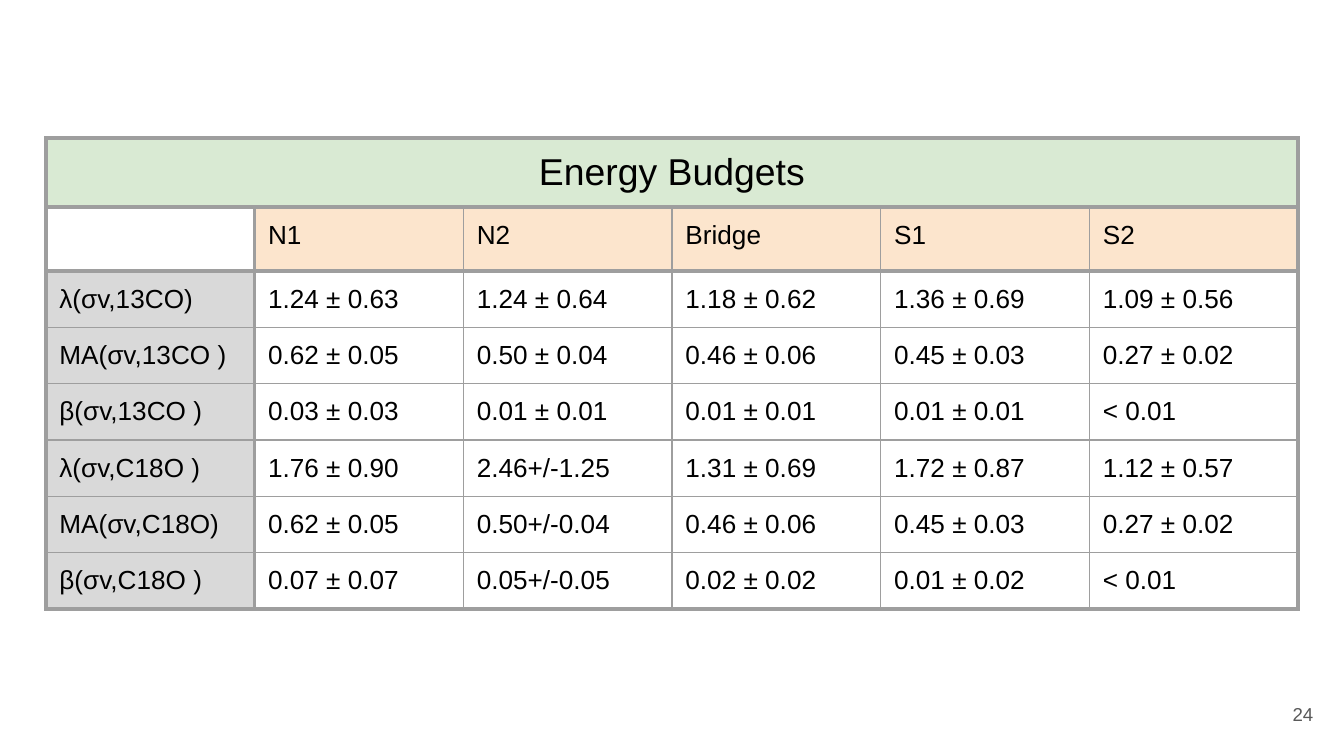
from lxml import etree
from pptx import Presentation
from pptx.dml.color import RGBColor
from pptx.enum import text
from pptx.oxml import ns
from pptx.util import Pt

BLACK = RGBColor(0x00, 0x00, 0x00)
GREY_TEXT = RGBColor(0x59, 0x59, 0x59)
GREY_LINE = RGBColor(0x9E, 0x9E, 0x9E)
GREY_FILL = RGBColor(0xD9, 0xD9, 0xD9)
GREEN = RGBColor(0xD9, 0xEA, 0xD3)
PEACH = RGBColor(0xFC, 0xE5, 0xCD)

THICK, THIN = Pt(2.25), Pt(0.75)
INSET = Pt(7.2)

TITLE = "Energy Budgets"
BUDGETS = [
    ["", "N1", "N2", "Bridge", "S1", "S2"],
    ["λ(σv,13CO)", "1.24 ± 0.63", "1.24 ± 0.64", "1.18 ± 0.62", "1.36 ± 0.69", "1.09 ± 0.56"],
    ["MA(σv,13CO )", "0.62 ± 0.05", "0.50 ± 0.04", "0.46 ± 0.06", "0.45 ± 0.03", "0.27 ± 0.02"],
    ["β(σv,13CO )", "0.03 ± 0.03", "0.01 ± 0.01", "0.01 ± 0.01", "0.01 ± 0.01", "< 0.01"],
    ["λ(σv,C18O )", "1.76 ± 0.90", "2.46+/-1.25", "1.31 ± 0.69", "1.72 ± 0.87", "1.12 ± 0.57"],
    ["MA(σv,C18O)", "0.62 ± 0.05", "0.50+/-0.04", "0.46 ± 0.06", "0.45 ± 0.03", "0.27 ± 0.02"],
    ["β(σv,C18O )", "0.07 ± 0.07", "0.05+/-0.05", "0.02 ± 0.02", "0.01 ± 0.02", "< 0.01"],
]


def set_all(target, values):
    for name, value in values.items():
        setattr(target, name, value)


def write(para, words, size, color=BLACK, align=text.PP_ALIGN.LEFT):
    para.alignment = align
    # The paragraph font also sizes a cell without words
    for font in (para.font, *([para.add_run().font] if words else [])):
        set_all(font, {"name": "Arial", "size": Pt(size)})
        font.color.rgb = color
    if words:
        para.runs[0].text = words


def draw_borders(cell, widths):
    properties = cell._tc.get_or_add_tcPr()
    for side, width in widths.items():
        line = etree.SubElement(properties, ns.qn(f"a:ln{side}"), w=str(width))
        fill = etree.SubElement(line, ns.qn("a:solidFill"))
        etree.SubElement(fill, ns.qn("a:srgbClr"), val=str(GREY_LINE))


def cell_fill(row, column):
    if row == 0:
        return GREEN
    if row == 1:
        return PEACH if column else None
    return None if column else GREY_FILL


def add_budget_table(page, left, top, width, row_heights):
    rows, columns = len(row_heights), len(BUDGETS[0])
    table = page.shapes.add_table(
        rows, columns, Pt(left), Pt(top), Pt(width), Pt(sum(row_heights))).table
    set_all(table, {"first_row": False, "horz_banding": False})
    for column in table.columns:
        column.width = Pt(width / columns)
    for row, height in zip(table.rows, row_heights):
        row.height = Pt(height)

    # Heavy rules frame the table, its two header rows and its label column
    heavy_x, heavy_y = {0, 1, columns}, {0, 1, 2, rows}
    for r in range(rows):
        for c in range(columns):
            cell = table.cell(r, c)
            set_all(cell, {f"margin_{side}": INSET
                           for side in ("left", "right", "top", "bottom")})
            draw_borders(cell, {
                "L": THICK if r == 0 or c in heavy_x else THIN,
                "R": THICK if r == 0 or c + 1 in heavy_x else THIN,
                "T": THICK if r in heavy_y else THIN,
                "B": THICK if r + 1 in heavy_y else THIN,
            })
            color = cell_fill(r, c)
            if color is None:
                cell.fill.background()
            else:
                cell.fill.solid()
                cell.fill.fore_color.rgb = color
            if r:
                write(cell.text_frame.paragraphs[0], BUDGETS[r - 1][c], 14)

    # Title across all columns
    table.cell(0, 0).merge(table.cell(0, columns - 1))
    write(table.cell(0, 0).text_frame.paragraphs[0], TITLE, 20,
          align=text.PP_ALIGN.CENTER)


def add_page_number(page, left, top, width, height, number):
    frame = page.shapes.add_textbox(Pt(left), Pt(top), Pt(width), Pt(height)).text_frame
    set_all(frame, {
        "word_wrap": True, "vertical_anchor": text.MSO_ANCHOR.MIDDLE,
        "margin_left": INSET, "margin_right": INSET,
        "margin_top": INSET, "margin_bottom": INSET,
    })
    write(frame.paragraphs[0], number, 10, GREY_TEXT, text.PP_ALIGN.RIGHT)


def main():
    deck = Presentation()
    set_all(deck, {"slide_width": Pt(720), "slide_height": Pt(405)})
    page = deck.slides.add_slide(deck.slide_layouts[6])
    add_budget_table(page, 24.6, 74, 670.8, [37, 34.2] + [30.1] * 6)
    add_page_number(page, 667.4, 367.2, 43.2, 31, "24")
    deck.save("out.pptx")


if __name__ == "__main__":
    main()
